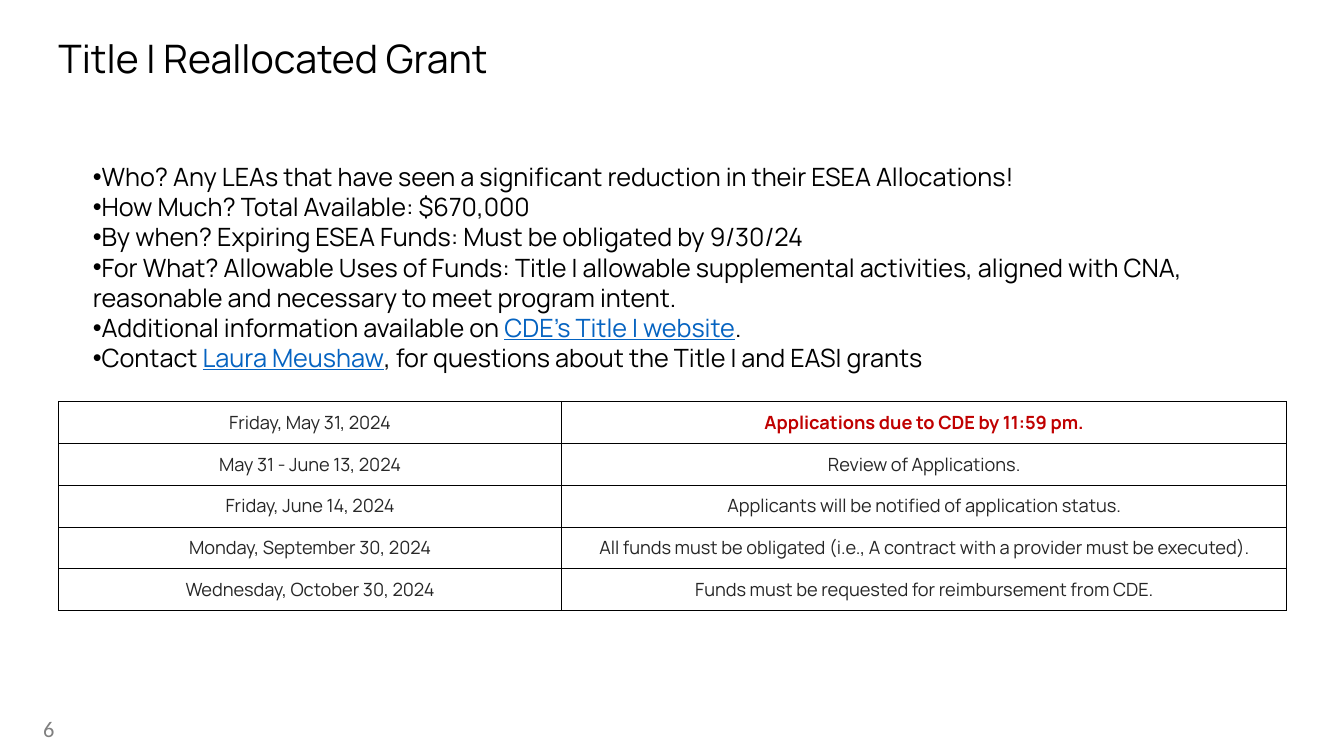
from dataclasses import dataclass

import pptx
import pptx.dml.color
import pptx.enum.text
import pptx.oxml.ns
import pptx.util
from lxml import etree

Inches = pptx.util.Inches
Pt = pptx.util.Pt
Align = pptx.enum.text.PP_ALIGN
Anchor = pptx.enum.text.MSO_ANCHOR

FONT = "Manrope"
BLACK, GREY, DARK, RED, LINK = "000000", "808080", "262626", "C00000", "0563C1"


@dataclass
class Bullet:
    text: str
    link: str = ""
    ending: str = ""


@dataclass
class Milestone:
    date: str
    event: str
    urgent: bool = False


BULLETS = [
    Bullet("Who? Any LEAs that have seen a significant reduction in their ESEA Allocations!"),
    Bullet("How Much? Total Available: $670,000"),
    Bullet("By when? Expiring ESEA Funds: Must be obligated by 9/30/24"),
    Bullet("For What? Allowable Uses of Funds: Title I allowable supplemental activities, "
           "aligned with CNA, reasonable and necessary to meet program intent."),
    Bullet("Additional information available on ", "CDE’s Title I website", "."),
    Bullet("Contact ", "Laura Meushaw", ", for questions about the Title I and EASI grants"),
]

MILESTONES = [
    Milestone("Friday, May 31, 2024", "Applications due to CDE by 11:59 pm.", urgent=True),
    Milestone("May 31 - June 13, 2024", "Review of Applications."),
    Milestone("Friday, June 14, 2024", "Applicants will be notified of application status."),
    Milestone("Monday, September 30, 2024",
              "All funds must be obligated (i.e., A contract with a provider must be executed)."),
    Milestone("Wednesday, October 30, 2024", "Funds must be requested for reimbursement from CDE."),
]


def color(value: str) -> pptx.dml.color.RGBColor:
    return pptx.dml.color.RGBColor.from_string(value)


def add_text(paragraph, text: str, *, size: float, fill: str = BLACK, font: str = FONT,
             bold: bool = False, underline: bool = False, align=Align.LEFT) -> None:
    paragraph.alignment = align
    run = paragraph.add_run()
    run.text = text
    run.font.name = font
    run.font.size = Pt(size)
    run.font.bold = bold
    run.font.underline = underline
    run.font.color.rgb = color(fill)


def place(shape, left: float, top: float, width: float, height: float) -> None:
    shape.left, shape.top = Inches(left), Inches(top)
    shape.width, shape.height = Inches(width), Inches(height)


def format_frame(frame, bottom: float = 0) -> None:
    frame.word_wrap = True
    frame.auto_size = pptx.enum.text.MSO_AUTO_SIZE.NONE
    frame.vertical_anchor = Anchor.TOP
    frame.margin_left = frame.margin_right = frame.margin_top = 0
    frame.margin_bottom = Inches(bottom)


def add_bullet_mark(paragraph) -> None:
    properties = paragraph._p.get_or_add_pPr()
    properties.set("marL", "0")
    properties.set("indent", str(Inches(-0.25)))
    mark = etree.SubElement(properties, pptx.oxml.ns.qn("a:buChar"))
    mark.set("char", "•")


def add_borders(cell) -> None:
    properties = cell._tc.get_or_add_tcPr()
    for side in ("a:lnL", "a:lnR", "a:lnT", "a:lnB"):
        line = etree.SubElement(properties, pptx.oxml.ns.qn(side), w=str(Pt(0.5)))
        fill = etree.SubElement(line, pptx.oxml.ns.qn("a:solidFill"))
        etree.SubElement(fill, pptx.oxml.ns.qn("a:srgbClr"), val=BLACK)


def add_title(slide) -> None:
    title = slide.shapes.title
    place(title, 0.58, 0.39, 8.87, 0.83)
    format_frame(title.text_frame)
    paragraph = title.text_frame.paragraphs[0]
    paragraph.line_spacing = 0.9
    add_text(paragraph, "Title I Reallocated Grant", size=28)


def add_bullets(slide) -> None:
    body = slide.placeholders[1]
    place(body, 0.92, 1.6, 11.5, 5.08)
    frame = body.text_frame
    format_frame(frame, bottom=0.05)
    for index, bullet in enumerate(BULLETS):
        paragraph = frame.add_paragraph() if index else frame.paragraphs[0]
        add_bullet_mark(paragraph)
        paragraph.space_before = paragraph.space_after = Pt(0)
        paragraph.line_spacing = 1.0
        add_text(paragraph, bullet.text, size=18)
        if bullet.link:
            add_text(paragraph, bullet.link, size=18, fill=LINK, underline=True)
            add_text(paragraph, bullet.ending, size=18)


def fill_cell(cell, text: str, fill: str = DARK, bold: bool = False) -> None:
    add_borders(cell)
    cell.fill.background()
    cell.vertical_anchor = Anchor.MIDDLE
    cell.margin_left = cell.margin_right = Inches(0.02)
    cell.margin_top = cell.margin_bottom = Inches(0.05)
    add_text(cell.text_frame.paragraphs[0], text, size=13, fill=fill, bold=bold,
             align=Align.CENTER)


def add_timeline(slide) -> None:
    widths, height = (4.99, 7.19), 2.08
    table = slide.shapes.add_table(len(MILESTONES), len(widths), Inches(0.58), Inches(3.98),
                                   Inches(sum(widths)), Inches(height)).table
    table.first_row = table.horz_banding = False
    for column, width in zip(table.columns, widths):
        column.width = Inches(width)
    for index, milestone in enumerate(MILESTONES):
        fill_cell(table.cell(index, 0), milestone.date)
        fill_cell(table.cell(index, 1), milestone.event,
                  RED if milestone.urgent else DARK, milestone.urgent)


def add_page_number(slide) -> None:
    box = slide.shapes.add_textbox(Inches(0.33), Inches(7.03), Inches(3), Inches(0.4))
    box.text_frame.word_wrap = True
    box.text_frame.vertical_anchor = Anchor.MIDDLE
    add_text(box.text_frame.paragraphs[0], "6", size=16, fill=GREY, font="Calibri")


def main() -> None:
    presentation = pptx.Presentation()
    presentation.slide_width = Inches(13.33)
    presentation.slide_height = Inches(7.5)
    slide = presentation.slides.add_slide(presentation.slide_layouts[1])

    # Heading and grant details
    add_title(slide)
    add_bullets(slide)

    # Page number and application timeline
    add_page_number(slide)
    add_timeline(slide)

    presentation.save("out.pptx")


if __name__ == "__main__":
    main()
